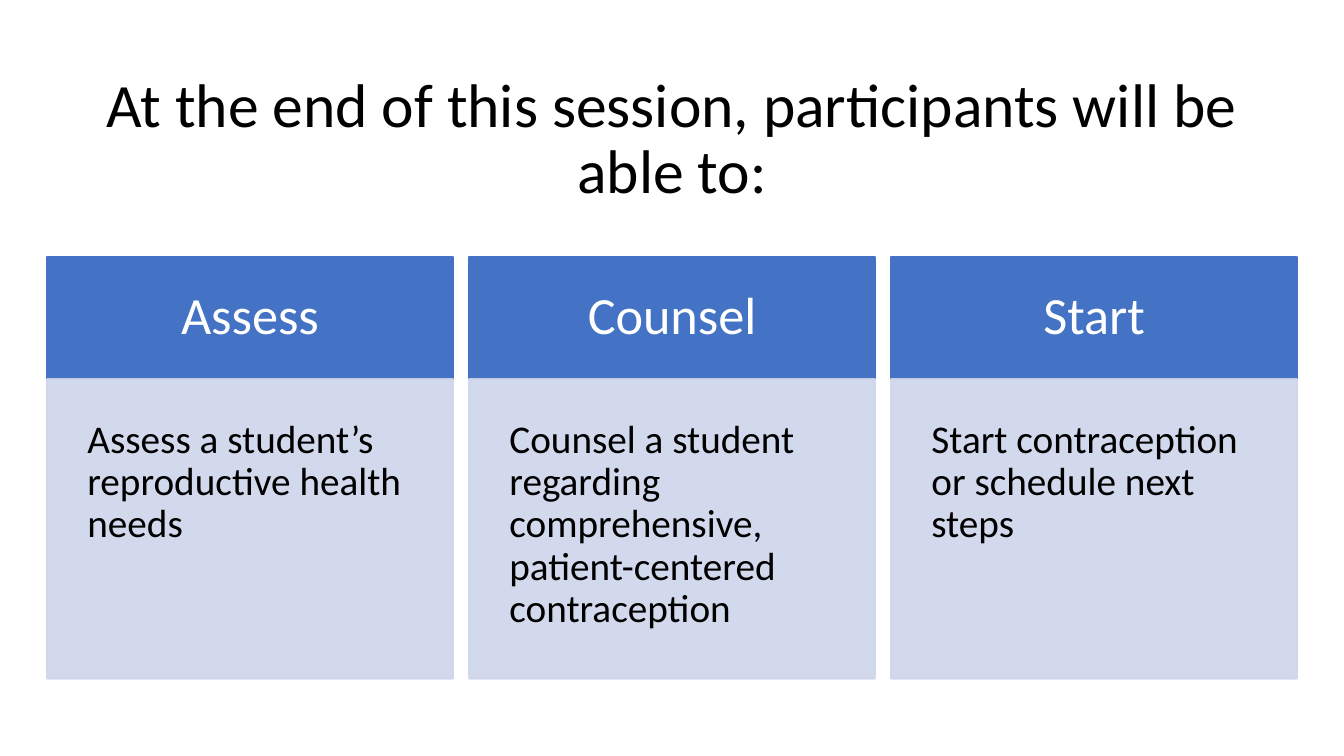
import dataclasses

import lxml.etree
import pptx
import pptx.dml.color
import pptx.enum.shapes
import pptx.enum.text
import pptx.oxml.ns
import pptx.shapes.autoshape
import pptx.slide
import pptx.util

Inches = pptx.util.Inches
Anchor = pptx.enum.text.MSO_ANCHOR
Align = pptx.enum.text.PP_ALIGN

COLORS = {"black": "000000", "white": "FFFFFF", "blue": "4472C4", "pale": "CFD5EA"}
FONT = "Calibri"

SLIDE_WIDTH = 10
SLIDE_HEIGHT = SLIDE_WIDTH * 9 / 16
LEFT, TOP = 0.35, 1.91
COLUMN_WIDTH, COLUMN_STEP = 3.02, 3.14
HEADER_HEIGHT, BODY_HEIGHT = 0.91, 2.23


@dataclasses.dataclass(frozen=True)
class Objective:
    heading: str
    detail: str


@dataclasses.dataclass(frozen=True)
class BoxStyle:
    fill: str
    text: str
    size: int
    inset: float
    align: Align
    anchor: Anchor
    opacity: int = 100


OBJECTIVES = [
    Objective("Assess", "Assess a student’s reproductive health needs"),
    Objective("Counsel", "Counsel a student regarding comprehensive, patient-centered contraception"),
    Objective("Start", "Start contraception or schedule next steps"),
]
HEADER = BoxStyle("blue", "white", 28, 0.24, Align.CENTER, Anchor.MIDDLE)
BODY = BoxStyle("pale", "black", 21, 0.3, Align.LEFT, Anchor.TOP, opacity=90)


def rgb(name: str) -> pptx.dml.color.RGBColor:
    return pptx.dml.color.RGBColor.from_string(COLORS[name])


def write_text(box: pptx.shapes.autoshape.Shape, text: str, size: int, color: str,
               inset: float, align: Align, anchor: Anchor) -> None:
    frame = box.text_frame
    frame.text = text
    frame.word_wrap = True
    frame.auto_size = pptx.enum.text.MSO_AUTO_SIZE.NONE
    frame.vertical_anchor = anchor
    frame.margin_left = frame.margin_right = Inches(inset)
    frame.margin_top = frame.margin_bottom = Inches(inset)
    para = frame.paragraphs[0]
    para.alignment = align
    para.line_spacing = 0.9
    para.space_before = pptx.util.Pt(0)
    para.font.name = FONT
    para.font.size = pptx.util.Pt(size)
    para.font.color.rgb = rgb(color)


def set_opacity(box: pptx.shapes.autoshape.Shape, percent: int) -> None:
    """Make the fill and the outline of the box partly transparent."""
    qn = pptx.oxml.ns.qn
    for color in box._element.spPr.iter(qn("a:srgbClr")):
        lxml.etree.SubElement(color, qn("a:alpha")).set("val", str(percent * 1000))


def add_box(page: pptx.slide.Slide, text: str, left: float, top: float,
            height: float, style: BoxStyle) -> None:
    box = page.shapes.add_shape(
        pptx.enum.shapes.MSO_SHAPE.RECTANGLE,
        Inches(left), Inches(top), Inches(COLUMN_WIDTH), Inches(height))
    box.shadow.inherit = False
    box.fill.solid()
    box.fill.fore_color.rgb = rgb(style.fill)
    box.line.color.rgb = rgb(style.fill)
    box.line.width = pptx.util.Pt(1)
    if style.opacity < 100:
        set_opacity(box, style.opacity)
    write_text(box, text, style.size, style.text, style.inset, style.align, style.anchor)


def add_title(page: pptx.slide.Slide, text: str) -> None:
    title = page.shapes.title
    title.left, title.top = Inches(0.34), Inches(0.45)
    title.width, title.height = Inches(9.32), Inches(0.66)
    write_text(title, text, 33, "black", 0.1, Align.CENTER, Anchor.TOP)


def main() -> None:
    deck = pptx.Presentation()
    deck.slide_width, deck.slide_height = Inches(SLIDE_WIDTH), Inches(SLIDE_HEIGHT)
    page = deck.slides.add_slide(deck.slide_layouts[5])
    add_title(page, "At the end of this session, participants will be able to:")
    for column, objective in enumerate(OBJECTIVES):
        left = LEFT + column * COLUMN_STEP
        add_box(page, objective.heading, left, TOP, HEADER_HEIGHT, HEADER)
        add_box(page, objective.detail, left, TOP + HEADER_HEIGHT, BODY_HEIGHT, BODY)
    deck.save("out.pptx")


if __name__ == "__main__":
    main()
